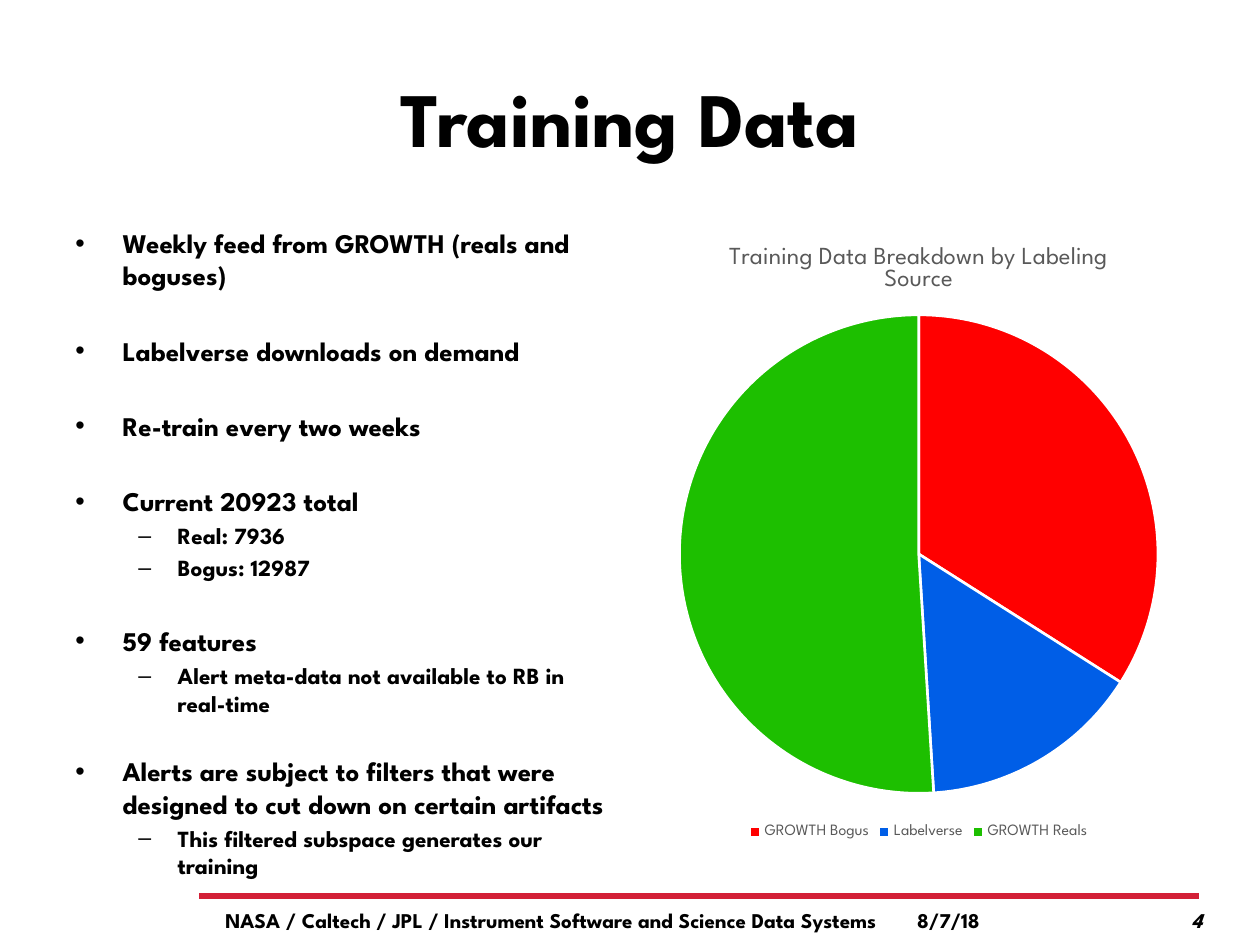
"""Build the training data slide with bullets, a pie chart and a footer."""
from typing import NamedTuple

import pptx
import pptx.chart.data
import pptx.dml.color
import pptx.enum.chart
import pptx.enum.shapes
import pptx.enum.text
import pptx.oxml
import pptx.oxml.ns
import pptx.util
from lxml import etree

Pt = pptx.util.Pt
RGBColor = pptx.dml.color.RGBColor
Align = pptx.enum.text.PP_ALIGN
Anchor = pptx.enum.text.MSO_ANCHOR
qn = pptx.oxml.ns.qn

FACE = "League Spartan"
BLACK = RGBColor(0, 0, 0)
WHITE = RGBColor(255, 255, 255)
GRAY = RGBColor(0x59, 0x59, 0x59)
CRIMSON = RGBColor(0xD3, 0x20, 0x37)
RED = RGBColor(0xFF, 0, 0)
BLUE = RGBColor(0, 0x5E, 0xE7)
GREEN = RGBColor(0x1D, 0xBF, 0)


class Box(NamedTuple):
    left: float
    top: float
    width: float
    height: float

    def points(self) -> list:
        return [Pt(side) for side in self]


class Level(NamedTuple):
    mark: str
    size: float
    margin: float
    hang: float


class Item(NamedTuple):
    text: str
    level: Level
    before: float


class Note(NamedTuple):
    text: str
    box: Box
    align: Align
    slant: bool = False


class Slice(NamedTuple):
    name: str
    value: int
    color: RGBColor


HEAD = Level("•", 15.4, 27, 27)
SUB = Level("–", 13.2, 58.5, 22.5)
GAP = 24.5

ITEMS = [
    Item("Weekly feed from GROWTH (reals and boguses)", HEAD, 0),
    Item("Labelverse downloads on demand", HEAD, GAP),
    Item("Re-train every two weeks", HEAD, GAP),
    Item("Current 20923 total", HEAD, GAP),
    Item("Real: 7936", SUB, 2.6),
    Item("Bogus: 12987", SUB, 2.6),
    Item("59 features", HEAD, GAP),
    Item("Alert meta-data not available to RB in real-time", SUB, 2.6),
    Item("Alerts are subject to filters that were designed to cut down on "
         "certain artifacts", HEAD, 21.7),
    Item("This filtered subspace generates our training", SUB, 2.6),
]
NOTES = [
    Note("8/7/18", Box(517, 511, 168, 29), Align.LEFT),
    Note("NASA / Caltech / JPL / Instrument Software and Science Data Systems",
         Box(97, 511, 436, 29), Align.CENTER),
    Note("4", Box(526, 511, 168, 29), Align.RIGHT, True),
]
SLICES = [
    Slice("GROWTH Bogus", 34, RED),
    Slice("Labelverse", 15, BLUE),
    Slice("GROWTH Reals", 51, GREEN),
]


def style(font, size: float, color: RGBColor, bold: bool = True) -> None:
    font.name = FACE
    font.size = Pt(size)
    font.bold = bold
    font.color.rgb = color


def add_title(slide, text: str, box: Box) -> None:
    title = slide.shapes.title
    title.left, title.top, title.width, title.height = box.points()
    frame = title.text_frame
    frame.text = text
    frame.vertical_anchor = Anchor.MIDDLE
    line = frame.paragraphs[0]
    line.alignment = Align.CENTER
    style(line.font, 44, BLACK)


def add_rule(slide) -> None:
    rule = slide.shapes.add_connector(
        pptx.enum.shapes.MSO_CONNECTOR.STRAIGHT,
        Pt(114), Pt(512), Pt(685), Pt(512))
    rule.line.color.rgb = CRIMSON
    rule.line.width = Pt(3)
    etree.SubElement(rule._element.spPr, qn("a:effectLst"))


def add_list(slide, items: list[Item], box: Box) -> None:
    frame = slide.shapes.add_textbox(*box.points()).text_frame
    frame.word_wrap = True
    for place, item in enumerate(items):
        line = frame.add_paragraph() if place else frame.paragraphs[0]
        line.text = item.text
        line.level = 0 if item.level is HEAD else 1
        props = line._p.get_or_add_pPr()
        props.set("marL", str(Pt(item.level.margin)))
        props.set("indent", str(-Pt(item.level.hang)))
        etree.SubElement(props, qn("a:buFont"), typeface="Arial")
        etree.SubElement(props, qn("a:buChar"), char=item.level.mark)
        line.space_before = Pt(item.before)
        style(line.font, item.level.size, BLACK)


def add_note(slide, note: Note) -> None:
    frame = slide.shapes.add_textbox(*note.box.points()).text_frame
    frame.word_wrap = True
    frame.vertical_anchor = Anchor.MIDDLE
    line = frame.paragraphs[0]
    line.text = note.text
    line.alignment = note.align
    style(line.font, 12, BLACK)
    line.font.italic = note.slant


def add_pie(slide, title: str, slices: list[Slice], box: Box) -> None:
    data = pptx.chart.data.CategoryChartData()
    data.categories = [part.name for part in slices]
    data.add_series("Series 1", [part.value for part in slices])
    chart = slide.shapes.add_chart(
        pptx.enum.chart.XL_CHART_TYPE.PIE, *box.points(), data).chart
    style(chart.font, 10, BLACK, False)
    chart.has_title = True
    frame = chart.chart_title.text_frame
    frame.text = title
    style(frame.paragraphs[0].font, 14, GRAY, False)
    chart.chart_title.include_in_layout = False
    chart.has_legend = True
    chart.legend.position = pptx.enum.chart.XL_LEGEND_POSITION.BOTTOM
    chart.legend.include_in_layout = False
    style(chart.legend.font, 9, GRAY, False)
    plot = chart.plots[0]
    plot.vary_by_categories = True
    for place, part in enumerate(slices):
        look = plot.series[0].points[place].format
        look.fill.solid()
        look.fill.fore_color.rgb = part.color
        look.line.color.rgb = WHITE
        look.line.width = Pt(1.5)
    area = chart._chartSpace.chart.plotArea
    for old in area.findall(qn("c:layout")):
        area.remove(old)
    layout = etree.Element(qn("c:layout"))
    manual = etree.SubElement(layout, qn("c:manualLayout"))
    for tag, value in [("layoutTarget", "inner"), ("xMode", "edge"),
                       ("yMode", "edge"), ("x", "0.07"), ("y", "0.15"),
                       ("w", "0.86"), ("h", "0.77")]:
        etree.SubElement(manual, qn("c:" + tag), val=value)
    area.insert(0, layout)


def main() -> None:
    deck = pptx.Presentation()
    deck.slide_width, deck.slide_height = Pt(720), Pt(540)
    slide = deck.slides.add_slide(deck.slide_layouts.get_by_name("Title Only"))
    add_rule(slide)
    add_title(slide, "Training Data", Box(36, 21.6, 648, 90))
    add_list(slide, ITEMS, Box(36, 126, 318, 373))
    for note in NOTES:
        add_note(slide, note)
    add_pie(slide, "Training Data Breakdown by Labeling Source", SLICES,
            Box(366, 126, 318, 356.4))
    deck.save("out.pptx")


if __name__ == "__main__":
    main()
